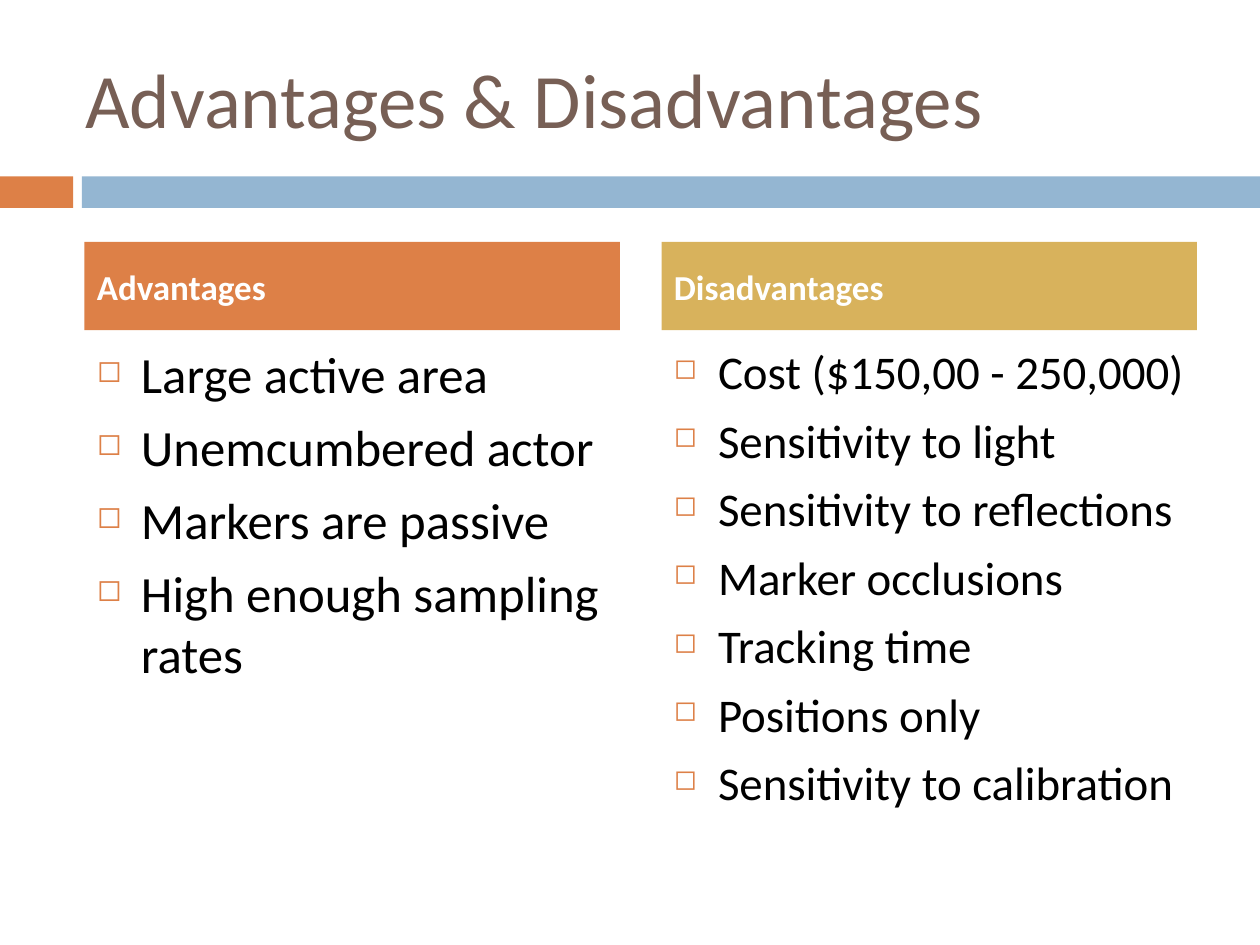
from dataclasses import dataclass

from lxml import etree
from pptx import Presentation
from pptx import util as u
from pptx.dml.color import RGBColor
from pptx.enum import shapes, text
from pptx.oxml.ns import qn


@dataclass(frozen=True)
class Theme:
    font: str = "Calibri"
    orange: str = "DD8047"
    blue: str = "94B6D2"
    gold: str = "D8B25C"
    brown: str = "775F55"
    black: str = "000000"
    white: str = "FFFFFF"
    title_size: float = 44
    header_size: float = 20
    space_before: float = 7
    bullet_indent: float = 0.35
    bullet_scale: int = 60


@dataclass(frozen=True)
class Box:
    left: float
    top: float
    width: float
    height: float

    def emu(self) -> list:
        return [u.Inches(v) for v in (self.left, self.top, self.width, self.height)]


@dataclass(frozen=True)
class Column:
    left: float
    header: str
    fill: str
    size: float
    items: tuple


THEME = Theme()
COLUMN_WIDTH = 4.25
BAND_TOP, BAND_HEIGHT = 1.4, 0.25
COLUMNS = (
    Column(0.67, "Advantages", THEME.orange, 29, (
        "Large active area",
        "Unemcumbered actor",
        "Markers are passive",
        "High enough sampling rates",
    )),
    Column(5.25, "Disadvantages", THEME.gold, 26.8, (
        "Cost ($150,00 - 250,000)",
        "Sensitivity to light",
        "Sensitivity to reflections",
        "Marker occlusions",
        "Tracking time",
        "Positions only",
        "Sensitivity to calibration",
    )),
)


def set_attrs(obj, values: dict) -> None:
    for name, value in values.items():
        setattr(obj, name, value)


def add_rect(s, box: Box, fill: str):
    sp = s.shapes.add_shape(shapes.MSO_SHAPE.RECTANGLE, *box.emu())
    sp.shadow.inherit = False
    sp.fill.solid()
    sp.fill.fore_color.rgb = RGBColor.from_string(fill)
    sp.line.fill.background()
    return sp


def add_bullet(p) -> None:
    indent = u.Inches(THEME.bullet_indent)
    pPr = p._p.get_or_add_pPr()
    pPr.set("marL", str(indent))
    pPr.set("indent", str(-indent))
    color = etree.SubElement(pPr, qn("a:buClr"))
    etree.SubElement(color, qn("a:srgbClr"), val=THEME.orange)
    etree.SubElement(pPr, qn("a:buSzPct"), val=str(THEME.bullet_scale * 1000))
    etree.SubElement(pPr, qn("a:buChar"), char="◻")


def write(sp, lines: tuple, size: float, color: str, bold: bool = False,
          before: float = 0, middle: bool = True, bullets: bool = False) -> None:
    tf = sp.text_frame
    anchor = text.MSO_ANCHOR.MIDDLE if middle else text.MSO_ANCHOR.TOP
    set_attrs(tf, {"word_wrap": True, "vertical_anchor": anchor})
    for i, line in enumerate(lines):
        p = tf.add_paragraph() if i else tf.paragraphs[0]
        set_attrs(p, {"alignment": text.PP_ALIGN.LEFT, "space_before": u.Pt(before)})
        if bullets:
            add_bullet(p)
        r = p.add_run()
        r.text = line
        set_attrs(r.font, {"name": THEME.font, "size": u.Pt(size), "bold": bold})
        r.font.color.rgb = RGBColor.from_string(color)


def add_column(s, col: Column) -> None:
    body = s.shapes.add_textbox(*Box(col.left, 2.67, COLUMN_WIDTH, 3.92).emu())
    write(body, col.items, col.size, THEME.black, before=THEME.space_before,
          middle=False, bullets=True)
    header = add_rect(s, Box(col.left, 1.92, COLUMN_WIDTH, 0.7), col.fill)
    write(header, (col.header,), THEME.header_size, THEME.white, bold=True,
          before=THEME.space_before)


def main() -> None:
    prs = Presentation()
    set_attrs(prs, {"slide_width": u.Inches(10), "slide_height": u.Inches(7.5)})
    s = prs.slides.add_slide(prs.slide_layouts[6])
    add_rect(s, Box(0, BAND_TOP, 0.58, BAND_HEIGHT), THEME.orange)
    add_rect(s, Box(0.65, BAND_TOP, 9.35, BAND_HEIGHT), THEME.blue)
    title = s.shapes.add_textbox(*Box(0.58, 0.3, 8.92, 0.95).emu())
    write(title, ("Advantages & Disadvantages",), THEME.title_size, THEME.brown)
    for col in COLUMNS:
        add_column(s, col)
    prs.save("out.pptx")


if __name__ == "__main__":
    main()
